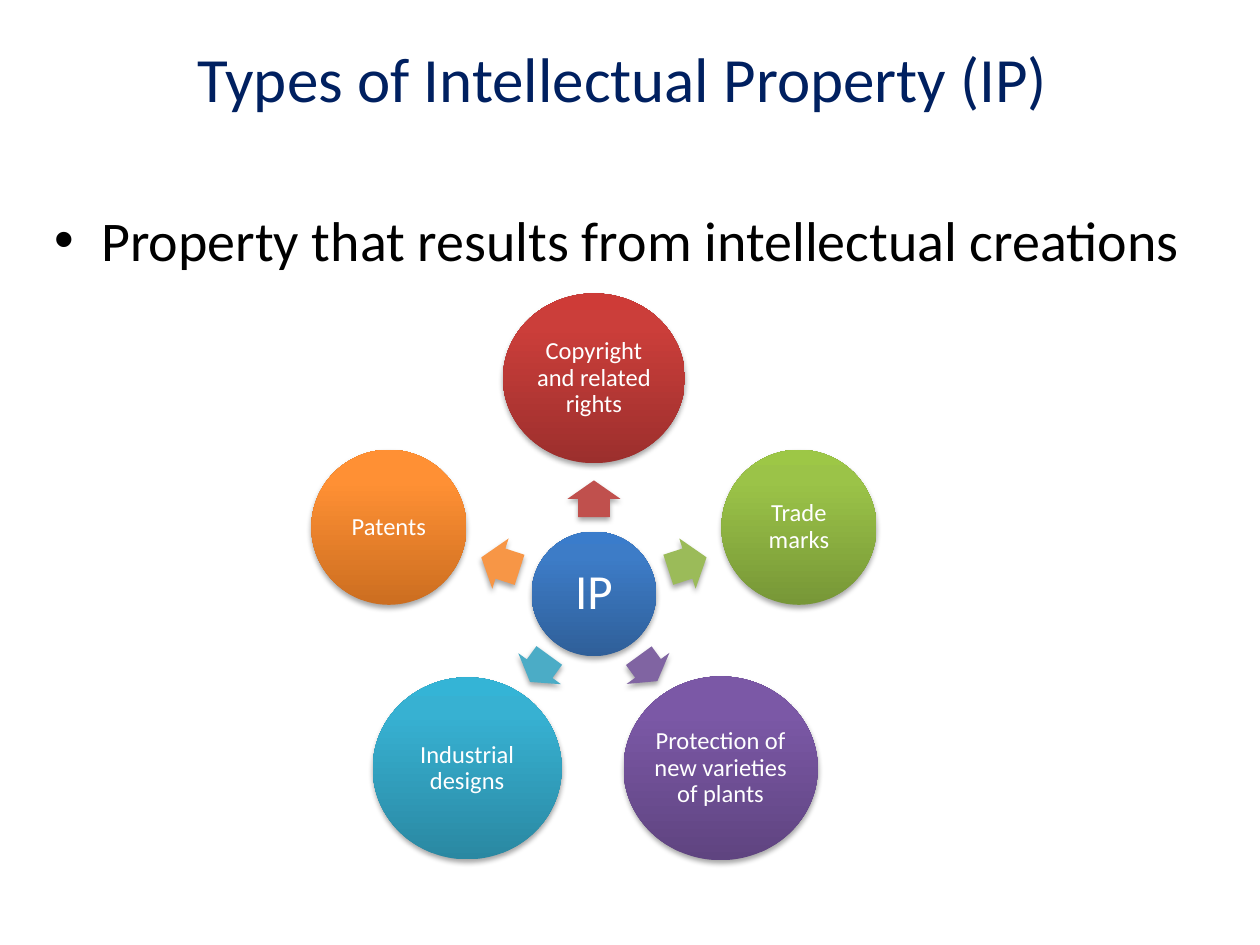
from copy import deepcopy
from math import cos, radians, sin

from pptx import Presentation
from pptx.dml.color import RGBColor
from pptx.enum.shapes import MSO_SHAPE as Shape
from pptx.enum.text import MSO_ANCHOR as Anchor, PP_ALIGN as Align
from pptx.oxml import parse_xml
from pptx.oxml.ns import nsdecls, qn
from pptx.util import Pt

# Content
TITLE = "Types of Intellectual Property (IP)"
DEFINITION = "Property that results from intellectual creations"
HUB = ("IP", 71.2, 71.2, ("2F5F99", "3D7CC7", "3A7CCB"))
# label, width, height, gradient from the bottom up, arrow colour,
# arrow length, arrow distance from the hub centre
TYPES = [
    ("Copyright and related rights", 104, 97, ("9C2F2D", "CB3E3A", "CE3B37"), "C0504D", 21, 54.4),
    ("Trade marks", 88.6, 88.6, ("779737", "9BC348", "9DC746"), "9BBB59", 23, 56.2),
    ("Protection of new varieties of plants", 111, 105, ("5F4480", "7B58A6", "7C57A8"), "8064A2", 18, 52.6),
    ("Industrial designs", 108, 104, ("2A88A2", "37B1D2", "34B4D6"), "4BACC6", 18.7, 52.8),
    ("Patents", 88.6, 88.6, ("CC6E20", "FF9034", "FF9136"), "F79646", 23, 56.2),
]

# Layout of the wheel
CENTRE_X = CENTRE_Y = 339.4
RADIUS = 123.2
ARROW_BREADTH = 30.2
STOPS = (0, 0.8, 1)
FONT = "Calibri"


def rgb(code):
    return RGBColor.from_string(code)


def style(paragraph, size, colour):
    font = paragraph.runs[0].font
    font.name, font.size = FONT, Pt(size)
    font.color.rgb = rgb(colour)


def set_margins(frame, left, top, right, bottom):
    frame.margin_left, frame.margin_top = Pt(left), Pt(top)
    frame.margin_right, frame.margin_bottom = Pt(right), Pt(bottom)


def add_text(left, top, width, height, text, size, colour):
    frame = slide.shapes.add_textbox(Pt(left), Pt(top), Pt(width), Pt(height)).text_frame
    frame.word_wrap = True
    frame.text = text
    style(frame.paragraphs[0], size, colour)
    return frame


def add_centred(kind, x, y, width, height):
    shape = slide.shapes.add_shape(
        kind, Pt(x - width / 2), Pt(y - height / 2), Pt(width), Pt(height))
    shape.line.fill.background()
    shape._element.spPr.append(parse_xml(
        f'<a:effectLst {nsdecls("a")}>'
        f'<a:outerShdw blurRad="{Pt(3.1)}" dist="{Pt(1.8)}" dir="5400000" rotWithShape="0">'
        '<a:srgbClr val="000000"><a:alpha val="35000"/></a:srgbClr>'
        '</a:outerShdw></a:effectLst>'))
    return shape


def add_circle(x, y, width, height, label, colours, size, inset):
    circle = add_centred(Shape.OVAL, x, y, width, height)
    circle.fill.gradient()
    circle.fill.gradient_angle = 90
    stop_list = circle._element.spPr.find(qn("a:gradFill")).find(qn("a:gsLst"))
    stop_list.append(deepcopy(stop_list[0]))
    for stop, position, colour in zip(circle.fill.gradient_stops, STOPS, colours):
        stop.position, stop.color.rgb = position, rgb(colour)
    frame = circle.text_frame
    frame.word_wrap = True
    frame.vertical_anchor = Anchor.MIDDLE
    set_margins(frame, inset, inset, inset, inset)
    frame.text = label
    paragraph = frame.paragraphs[0]
    paragraph.alignment, paragraph.line_spacing = Align.CENTER, 0.9
    style(paragraph, size, "FFFFFF")


def add_arrow(x, y, length, colour, rotation):
    arrow = add_centred(Shape.RIGHT_ARROW, x, y, length, ARROW_BREADTH)
    arrow.adjustments[0], arrow.adjustments[1] = 0.6, 0.5
    arrow.fill.solid()
    arrow.fill.fore_color.rgb = rgb(colour)
    arrow.rotation = rotation


def on_wheel(angle, distance):
    return (CENTRE_X + distance * cos(radians(angle)),
            CENTRE_Y + distance * sin(radians(angle)))


prs = Presentation()
prs.slide_width, prs.slide_height = Pt(720), Pt(540)
slide = prs.slides.add_slide(prs.slide_layouts[6])

# Title
title = add_text(36, 21.6, 648, 90, TITLE, 36, "002060")
set_margins(title, 7.2, 1, 15.4, 3.6)
title.paragraphs[0].alignment = Align.CENTER

# Definition with a hanging bullet
definition = add_text(23.8, 113.8, 660, 90, DEFINITION, 32, "000000")
bullet = definition.paragraphs[0]._p.get_or_add_pPr()
bullet.set("marL", str(Pt(27)))
bullet.set("indent", str(-Pt(27)))
bullet.append(parse_xml(f'<a:buFont {nsdecls("a")} typeface="Arial"/>'))
bullet.append(parse_xml(f'<a:buChar {nsdecls("a")} char="•"/>'))

# Hub, then each type clockwise from the top
hub_label, hub_width, hub_height, hub_colours = HUB
add_circle(CENTRE_X, CENTRE_Y, hub_width, hub_height, hub_label, hub_colours, 28, 2.8)
for i, (label, width, height, colours, arrow_colour, length, distance) in enumerate(TYPES):
    angle = -90 + i * 360 / len(TYPES)
    add_arrow(*on_wheel(angle, distance), length, arrow_colour, angle % 360)
    add_circle(*on_wheel(angle, RADIUS), width, height, label, colours, 14, 1.4)

prs.save("out.pptx")
